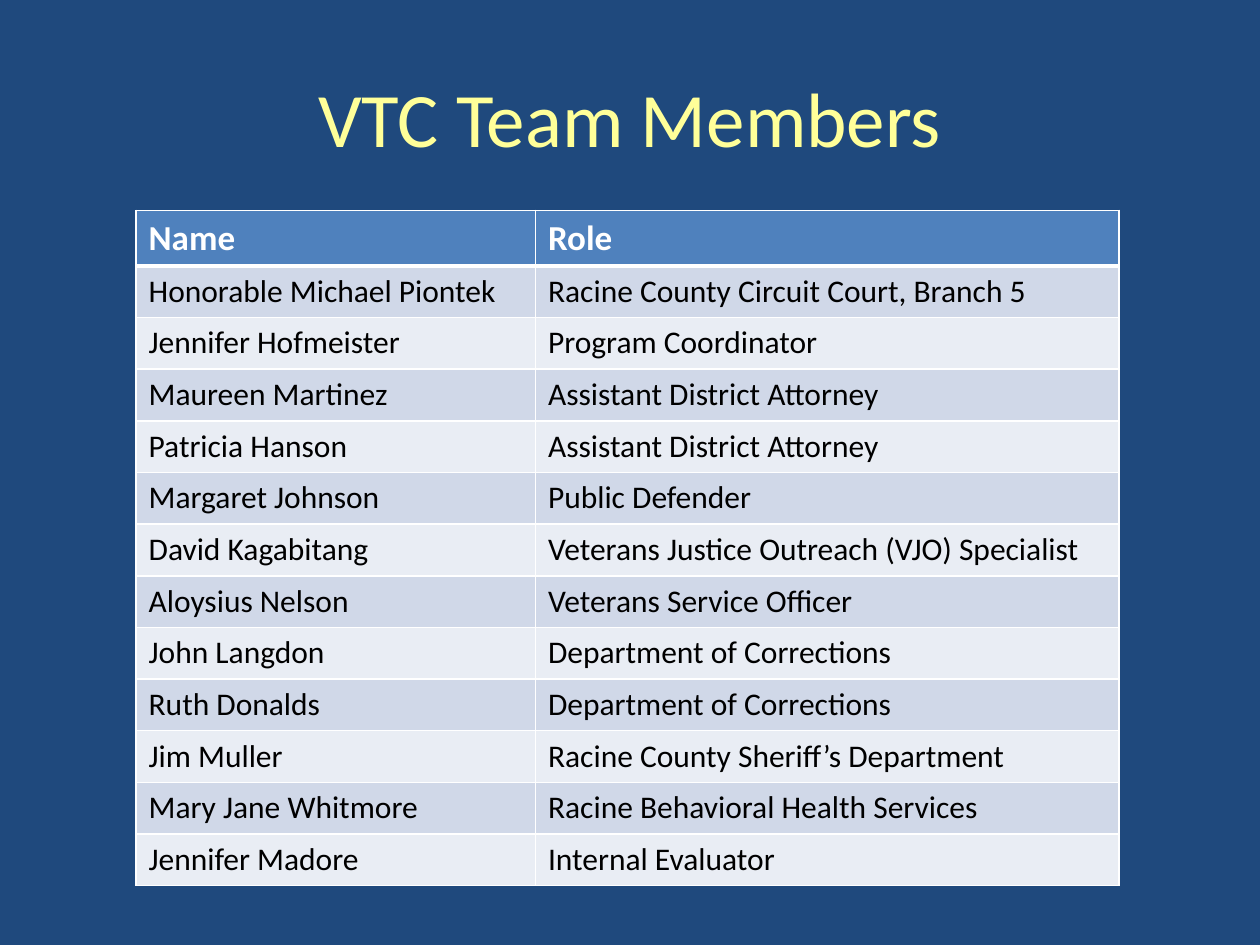
import pptx
import pptx.util
import pptx.dml.color
import pptx.enum.text
import pptx.oxml.ns
from dataclasses import dataclass
from lxml import etree

# Content
TITLE = "VTC Team Members"
HEAD = ("Name", "Role")
TEAM = [
    ("Honorable Michael Piontek", "Racine County Circuit Court, Branch 5"),
    ("Jennifer Hofmeister", "Program Coordinator"),
    ("Maureen Martinez", "Assistant District Attorney"),
    ("Patricia Hanson", "Assistant District Attorney"),
    ("Margaret Johnson", "Public Defender"),
    ("David Kagabitang", "Veterans Justice Outreach (VJO) Specialist"),
    ("Aloysius Nelson", "Veterans Service Officer"),
    ("John Langdon", "Department of Corrections"),
    ("Ruth Donalds", "Department of Corrections"),
    ("Jim Muller", "Racine County Sheriff’s Department"),
    ("Mary Jane Whitmore", "Racine Behavioral Health Services"),
    ("Jennifer Madore", "Internal Evaluator"),
]


@dataclass(frozen=True)
class Theme:
    font: str = "Calibri"
    back: str = "1F497D"
    title: str = "FFFF99"
    head: str = "4F81BD"
    bands: tuple = ("D0D8E8", "E9EDF4")
    white: str = "FFFFFF"
    ink: str = "000000"
    big: int = 44
    mid: int = 20
    small: int = 18
    thin: int = 1
    thick: int = 3


THEME = Theme()

# Layout in inches
WIDE, HIGH = 10, 7.5
EDGE = 0.05 * WIDE
TOP, TALL = 0.04 * HIGH, 1.25
LEFT, START = 1.08, 1.67
COLS = (3.17, 4.63)
ROWS = [0.44] + [0.41] * len(TEAM)

inch = pptx.util.Inches
color = pptx.dml.color.RGBColor.from_string


def write(frame, text, size, ink, bold=False):
    run = frame.paragraphs[0].add_run()
    run.text = text
    font = run.font
    font.name, font.size, font.bold = THEME.font, pptx.util.Pt(size), bold
    font.color.rgb = color(ink)


def paint(item, hue):
    item.fill.solid()
    item.fill.fore_color.rgb = color(hue)


def rule(cell, top, base):
    """Draw the four cell borders, placed ahead of the fill."""
    props = cell._tc.get_or_add_tcPr()
    sides = {"L": THEME.thin, "R": THEME.thin, "T": top, "B": base}
    for spot, (side, width) in enumerate(sides.items()):
        line = etree.Element(pptx.oxml.ns.qn(f"a:ln{side}"),
                             w=str(pptx.util.Pt(width)))
        fill = etree.SubElement(line, pptx.oxml.ns.qn("a:solidFill"))
        etree.SubElement(fill, pptx.oxml.ns.qn("a:srgbClr"), val=THEME.white)
        props.insert(spot, line)


def add_title(slide):
    title = slide.shapes.title
    title.left, title.top = inch(EDGE), inch(TOP)
    title.width, title.height = inch(WIDE - 2 * EDGE), inch(TALL)
    frame = title.text_frame
    frame.vertical_anchor = pptx.enum.text.MSO_ANCHOR.MIDDLE
    frame.paragraphs[0].alignment = pptx.enum.text.PP_ALIGN.CENTER
    write(frame, TITLE, THEME.big, THEME.title)


def add_team(slide):
    table = slide.shapes.add_table(
        len(ROWS), len(COLS), inch(LEFT), inch(START),
        inch(sum(COLS)), inch(sum(ROWS))).table
    for col, width in zip(table.columns, COLS):
        col.width = inch(width)
    for row, height in zip(table.rows, ROWS):
        row.height = inch(height)
    for r, texts in enumerate([HEAD] + TEAM):
        first = r == 0
        hue = THEME.head if first else THEME.bands[(r - 1) % 2]
        size = THEME.mid if first else THEME.small
        ink = THEME.white if first else THEME.ink
        top = THEME.thick if r == 1 else THEME.thin
        base = THEME.thick if first else THEME.thin
        for c, text in enumerate(texts):
            cell = table.cell(r, c)
            paint(cell, hue)
            rule(cell, top, base)
            write(cell.text_frame, text, size, ink, first)


def main():
    deck = pptx.Presentation()
    deck.slide_width, deck.slide_height = inch(WIDE), inch(HIGH)
    slide = deck.slides.add_slide(deck.slide_layouts.get_by_name("Title Only"))
    paint(slide.background, THEME.back)
    add_title(slide)
    add_team(slide)
    deck.save("out.pptx")


if __name__ == "__main__":
    main()
